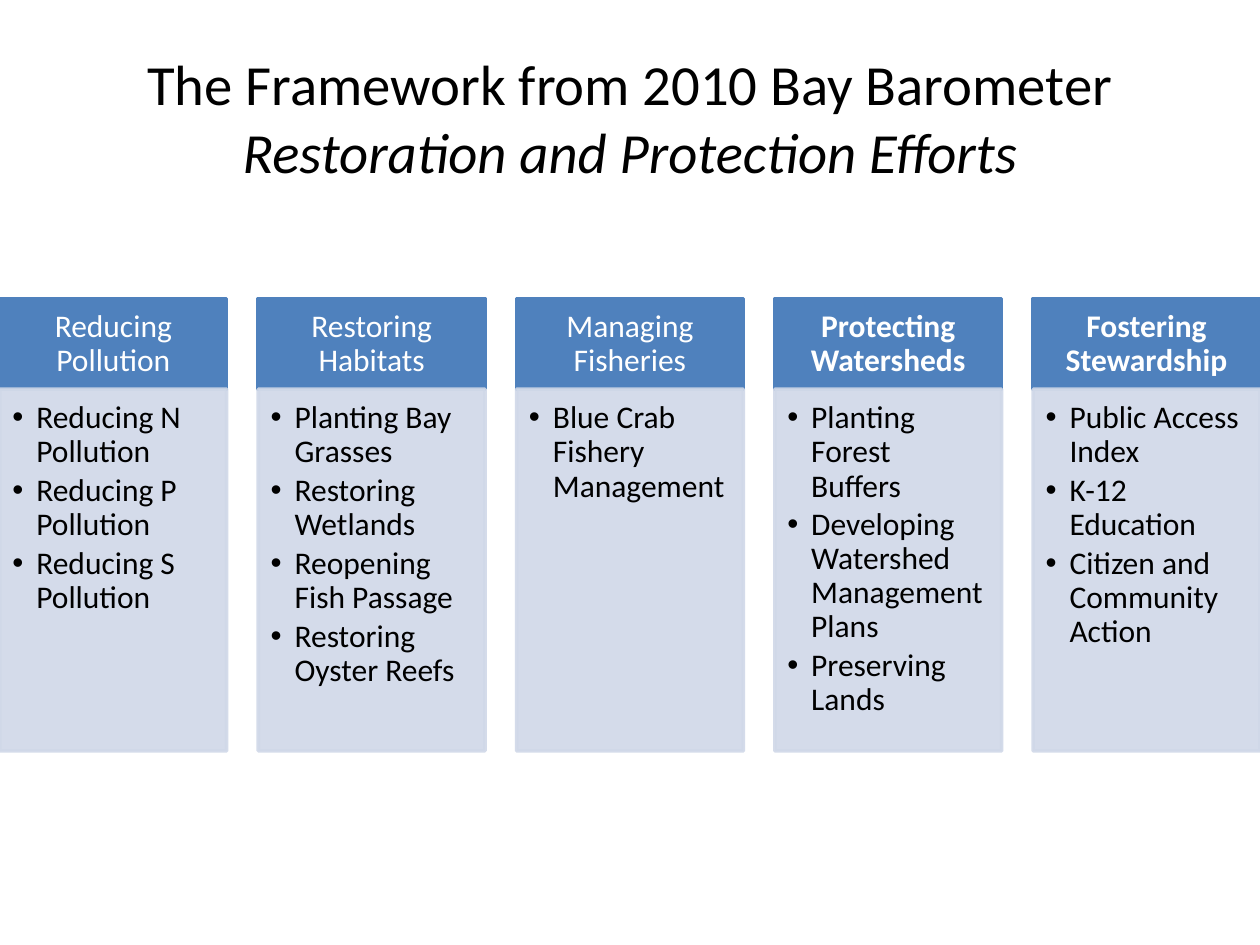
from pptx import Presentation
from pptx.dml.color import RGBColor
from pptx.enum.shapes import MSO_SHAPE as Shape
from pptx.enum.text import MSO_ANCHOR as Anchor, PP_ALIGN as Align
from pptx.oxml.ns import qn
from pptx.util import Inches, Pt
from lxml.etree import SubElement

WIDTH, HEIGHT = 10, 7.5
BLUE, PALE, BLACK, WHITE = "4F81BD", "D0D8E8", "000000", "FFFFFF"
GAP = 0.25
INDENT = 0.19
HEAD_SHARE = 0.2

# heading, bold heading, bullet items
THEMES = [
    ("Reducing Pollution", False,
     ["Reducing N Pollution", "Reducing P Pollution", "Reducing S Pollution"]),
    ("Restoring Habitats", False,
     ["Planting Bay Grasses", "Restoring Wetlands",
      "Reopening Fish Passage", "Restoring Oyster Reefs"]),
    ("Managing Fisheries", False, ["Blue Crab Fishery Management"]),
    ("Protecting Watersheds", True,
     ["Planting Forest Buffers", "Developing Watershed Management Plans",
      "Preserving Lands"]),
    ("Fostering Stewardship", True,
     ["Public Access Index", "K-12 Education",
      "Citizen and Community Action"]),
]


def color(code):
    return RGBColor.from_string(code)


def style(para, size, code, bold=False):
    for run in para.runs:
        font = run.font
        font.name, font.size, font.bold = "Calibri", Pt(size), bold
        font.color.rgb = color(code)


def inset(frame, left, top, right, bottom):
    frame.word_wrap = True
    frame.margin_left, frame.margin_top = Inches(left), Inches(top)
    frame.margin_right, frame.margin_bottom = Inches(right), Inches(bottom)


def fade(fill, percent):
    """Set the opacity of a solid fill element."""
    SubElement(fill.find(qn("a:srgbClr")), qn("a:alpha"),
               val=str(percent * 1000))


def panel(slide, box, code, opacity=100):
    shape = slide.shapes.add_shape(Shape.RECTANGLE, *map(Inches, box))
    shape.shadow.inherit = False
    shape.fill.solid()
    shape.fill.fore_color.rgb = color(code)
    shape.line.color.rgb = color(code)
    shape.line.width = Pt(2)
    if opacity < 100:
        for fill in shape.element.spPr.iter(qn("a:solidFill")):
            fade(fill, opacity)
    return shape.text_frame


def bullet(para):
    props = para._p.get_or_add_pPr()
    props.set("marL", str(Inches(INDENT)))
    props.set("indent", str(-Inches(INDENT)))
    SubElement(props, qn("a:buFont"), typeface="Arial")
    SubElement(props, qn("a:buChar"), char="•")


def title(slide, box):
    frame = slide.shapes.add_textbox(*map(Inches, box)).text_frame
    frame.word_wrap = True
    frame.vertical_anchor = Anchor.MIDDLE
    para = frame.paragraphs[0]
    para.text = ("The Framework from 2010 Bay Barometer\v"
                 "Restoration and Protection Efforts")
    para.alignment = Align.CENTER
    style(para, 32.4, BLACK)
    para.runs[1].font.italic = True


def heading(slide, box, text, bold):
    frame = panel(slide, box, BLUE)
    inset(frame, 0.14, 0.08, 0.14, 0.08)
    frame.vertical_anchor = Anchor.MIDDLE
    frame.text = text
    para = frame.paragraphs[0]
    para.alignment = Align.CENTER
    para.line_spacing = 0.9
    style(para, 18, WHITE, bold)


def listing(slide, box, items):
    frame = panel(slide, box, PALE, 90)
    inset(frame, 0.1, 0.1, 0.12, 0.16)
    frame.vertical_anchor = Anchor.TOP
    frame.text = "\n".join(items)
    for para in frame.paragraphs:
        para.alignment = Align.LEFT
        para.line_spacing = 0.9
        para.space_after = Pt(2.7)
        bullet(para)
        style(para, 18, BLACK)


def columns(slide, box):
    left, top, width, height = box
    wide = (width - GAP * (len(THEMES) - 1)) / len(THEMES)
    head = height * HEAD_SHARE
    for i, (name, bold, items) in enumerate(THEMES):
        x = left + i * (wide + GAP)
        heading(slide, (x, top, wide, head), name, bold)
        listing(slide, (x, top + head, wide, height - head), items)


def main():
    deck = Presentation()
    deck.slide_width, deck.slide_height = Inches(WIDTH), Inches(HEIGHT)
    slide = deck.slides.add_slide(deck.slide_layouts[6])
    title(slide, (WIDTH * 0.05, HEIGHT * 0.04, WIDTH * 0.9, HEIGHT / 6))
    columns(slide, (0, 2.37, WIDTH, 3.59))
    deck.save("out.pptx")


if __name__ == "__main__":
    main()
